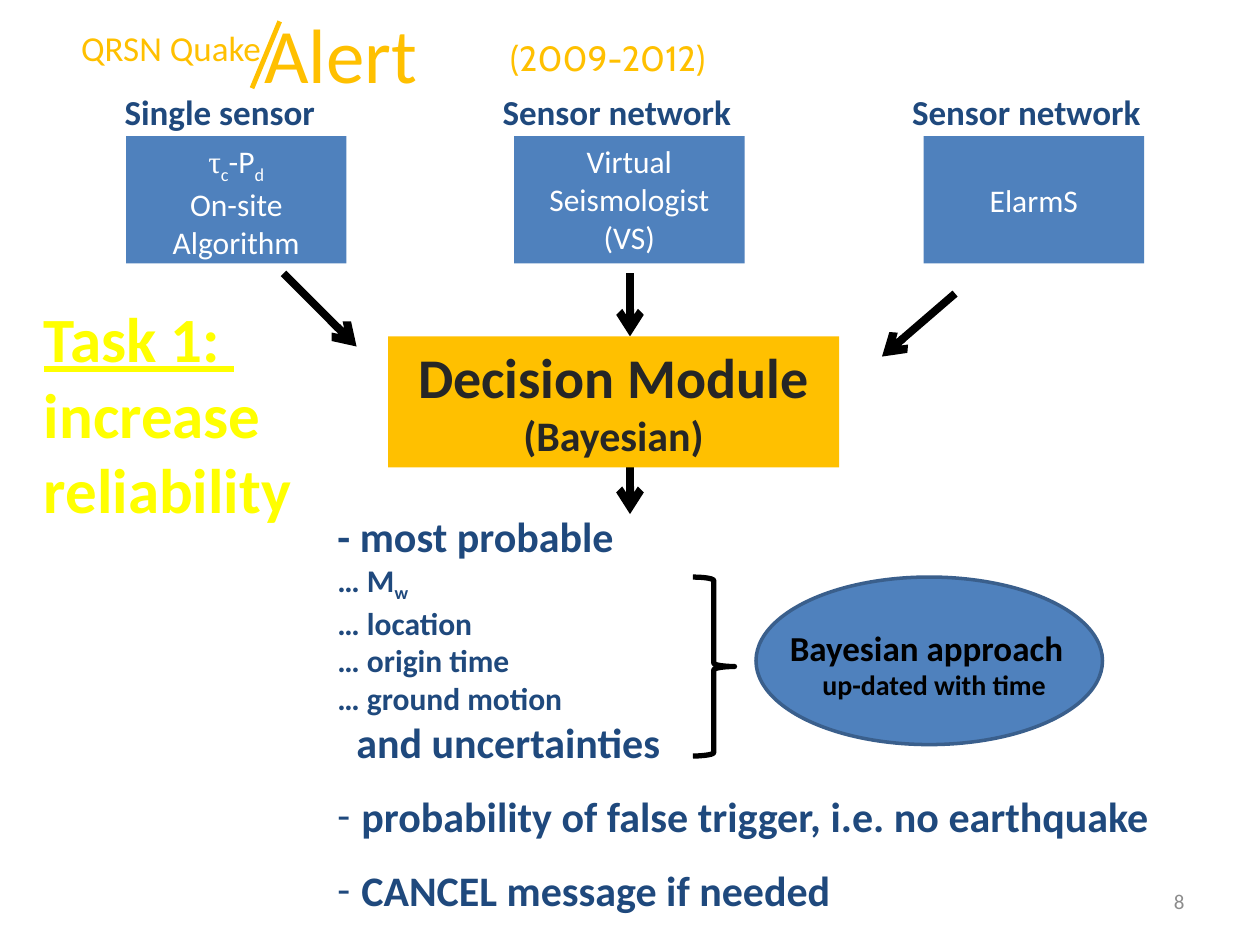
import pptx
import pptx.util
import pptx.dml.color
import pptx.enum.shapes
import pptx.enum.text
import pptx.oxml
import pptx.oxml.ns

Inches = pptx.util.Inches
KIND = pptx.enum.shapes.MSO_SHAPE
ALIGN = pptx.enum.text.PP_ALIGN
ANCHOR = pptx.enum.text.MSO_ANCHOR


class Theme:
    font, greek = "Calibri", "Times New Roman"
    year_font = "Cabin"
    blue, edge, navy = "4F81BD", "3A5F8C", "1F497D"
    gold, yellow = "FFC000", "FFFF00"
    black, dark, gray, white = "000000", "262626", "8C8C8C", "FFFFFF"
    tiny, small, body, label = 12, 16, 18, 20
    large, head, task, title = 24, 32, 36, 44
    gap = 13.4


def rgb(code):
    return pptx.dml.color.RGBColor.from_string(code)


def add_child(parent, tag, **attrs):
    node = pptx.oxml.ns.qn(tag)
    child = parent.makeelement(node, attrs)
    parent.append(child)
    return child


def add_run(para, text, size, color, bold=False, font=Theme.font,
            line=False, sub=False):
    run = para.add_run()
    run.text = text
    run.font.color.rgb = rgb(color)
    looks = {"size": pptx.util.Pt(size), "bold": bold, "name": font,
             "underline": line}
    for name, value in looks.items():
        setattr(run.font, name, value)
    if sub:
        run.font._element.set("baseline", "-25000")


def write(shape, paras, color, bold=False, align=ALIGN.LEFT, wrap=True,
          anchor=ANCHOR.TOP):
    """Each paragraph is (runs, format); each run is (text, size, format)."""
    frame = shape.text_frame
    frame.word_wrap = wrap
    frame.vertical_anchor = anchor
    for i, (runs, form) in enumerate(paras):
        para = frame.paragraphs[0] if i == 0 else frame.add_paragraph()
        para.alignment = align
        para.space_before = pptx.util.Pt(form.get("before", 0))
        props = para._p.get_or_add_pPr()
        if "indent" in form:
            props.set("marL", str(Inches(form["indent"])))
        if "mark" in form:
            props.set("indent", str(-Inches(form["indent"])))
            add_child(props, "a:buFont", typeface=Theme.font)
            add_child(props, "a:buChar", char=form["mark"])
        for text, size, look in runs:
            add_run(para, text, size, color, **{"bold": bold, **look})


def plain(text, size, **form):
    look = {key: form.pop(key) for key in ("font", "line") if key in form}
    return [(text, size, look)], form


def add_text(slide, box, paras, color, **form):
    shape = slide.shapes.add_textbox(*map(Inches, box))
    write(shape, paras, color, **form)


def add_block(slide, kind, box, fill=None, edge=None, width=2):
    shape = slide.shapes.add_shape(kind, *map(Inches, box))
    shape.shadow.inherit = False
    if fill:
        shape.fill.solid()
        shape.fill.fore_color.rgb = rgb(fill)
    else:
        shape.fill.background()
    if edge:
        shape.line.color.rgb = rgb(edge)
        shape.line.width = pptx.util.Pt(width)
    else:
        shape.line.fill.background()
    return shape


def add_line(slide, ends, color, width, arrow=False):
    line = slide.shapes.add_connector(
        pptx.enum.shapes.MSO_CONNECTOR.STRAIGHT, *map(Inches, ends))
    line.line.color.rgb = rgb(color)
    line.line.width = pptx.util.Pt(width)
    if arrow:
        add_child(line.line._get_or_add_ln(), "a:tailEnd", type="arrow")
    add_child(line._element.spPr, "a:effectLst")


def add_title(slide):
    add_text(slide, (0, 0.16, 2.17, 0.44), [plain("QRSN Quake", Theme.label)],
             Theme.gold, align=ALIGN.RIGHT)
    add_text(slide, (2, 0, 2.25, 0.84), [plain("Alert", Theme.title)],
             Theme.gold)
    add_line(slide, (2, 0.7, 2.22, 0.17), Theme.gold, 2.75)
    add_text(slide, (3.95, 0.24, 2, 0.44),
             [plain("(2009-2012)", Theme.label, font=Theme.year_font)],
             Theme.gold)


def add_source(slide, label, spot, box, paras, anchor=ANCHOR.TOP):
    left, width = spot
    add_text(slide, (left, 0.67, width, 0.44), [plain(label, Theme.label)],
             Theme.navy, bold=True, wrap=False)
    left, width = box
    block = add_block(slide, KIND.RECTANGLE, (left, 1.08, width, 1.01),
                      Theme.blue)
    write(block, paras, Theme.white, align=ALIGN.CENTER, anchor=anchor)


def add_sources(slide):
    size = Theme.body
    onsite = [([("τ", size, {"font": Theme.greek}), ("c", size, {"sub": True}),
                ("-P", size, {}), ("d", size, {"sub": True})], {}),
              plain("On-site Algorithm", size)]
    add_source(slide, "Single sensor", (0.89, 1.73), (1, 1.75), onsite)
    add_source(slide, "Sensor network", (3.89, 2.03), (4.08, 1.83),
               [plain("Virtual Seismologist (VS)", size)])
    add_source(slide, "Sensor network", (7.14, 2.03), (7.33, 1.75),
               [plain("ElarmS", size)], ANCHOR.MIDDLE)


def add_module(slide):
    for ends in ((2.25, 2.17, 2.83, 2.75), (7.58, 2.33, 7, 2.83),
                 (5, 2.17, 5, 2.67), (5, 3.58, 5, 4.08)):
        add_line(slide, ends, Theme.black, 4.5, arrow=True)
    block = add_block(slide, KIND.RECTANGLE, (3.08, 2.67, 3.58, 1.04),
                      Theme.gold)
    write(block, [plain("Decision Module", Theme.head),
                  plain("(Bayesian)", Theme.large)],
          Theme.dark, bold=True, align=ALIGN.CENTER)


def add_results(slide):
    large, body = Theme.large, Theme.body
    point = {"mark": "-", "indent": 0.19, "before": Theme.gap}
    paras = [plain("- most probable", large),
             ([("… M", body, {}), ("w", body, {"sub": True})], {})]
    paras += [plain("… " + item, body)
              for item in ("location", "origin time", "ground motion")]
    paras += [plain("and uncertainties", large, indent=0.15),
              plain("probability of false trigger, i.e. no earthquake",
                    large, **point),
              plain("CANCEL message if needed", large, **point)]
    add_text(slide, (2.58, 4, 6.85, 3.3), paras, Theme.navy, bold=True)


def add_method(slide):
    add_block(slide, KIND.RIGHT_BRACE, (5.5, 4.58, 0.33, 1.42),
              edge=Theme.black, width=3)
    add_block(slide, KIND.OVAL, (6, 4.58, 2.75, 1.33), Theme.blue, Theme.edge)
    add_text(slide, (6.17, 4.92, 2.39, 0.44),
             [plain("Bayesian approach", Theme.label)], Theme.black,
             bold=True, wrap=False)
    add_text(slide, (6, 5.25, 2.83, 0.37),
             [plain("up-dated with time", Theme.small)], Theme.black,
             bold=True, align=ALIGN.CENTER)


def main():
    deck = pptx.Presentation()
    deck.slide_width, deck.slide_height = Inches(10), Inches(7.5)
    slide = deck.slides.add_slide(deck.slide_layouts[6])

    # Heading and the three inputs
    add_title(slide)
    add_sources(slide)

    # Decision step and what it yields
    add_module(slide)
    add_results(slide)
    add_method(slide)

    # Task note and page number
    add_text(slide, (0.25, 2.33, 2.21, 1.92),
             [plain("Task 1: ", Theme.task, line=True),
              plain("increase", Theme.task), plain("reliability", Theme.task)],
             Theme.yellow, bold=True, wrap=False)
    add_text(slide, (7.17, 6.95, 2.33, 0.4), [plain("8", Theme.tiny)],
             Theme.gray, align=ALIGN.RIGHT, anchor=ANCHOR.MIDDLE)
    deck.save("out.pptx")


if __name__ == "__main__":
    main()
